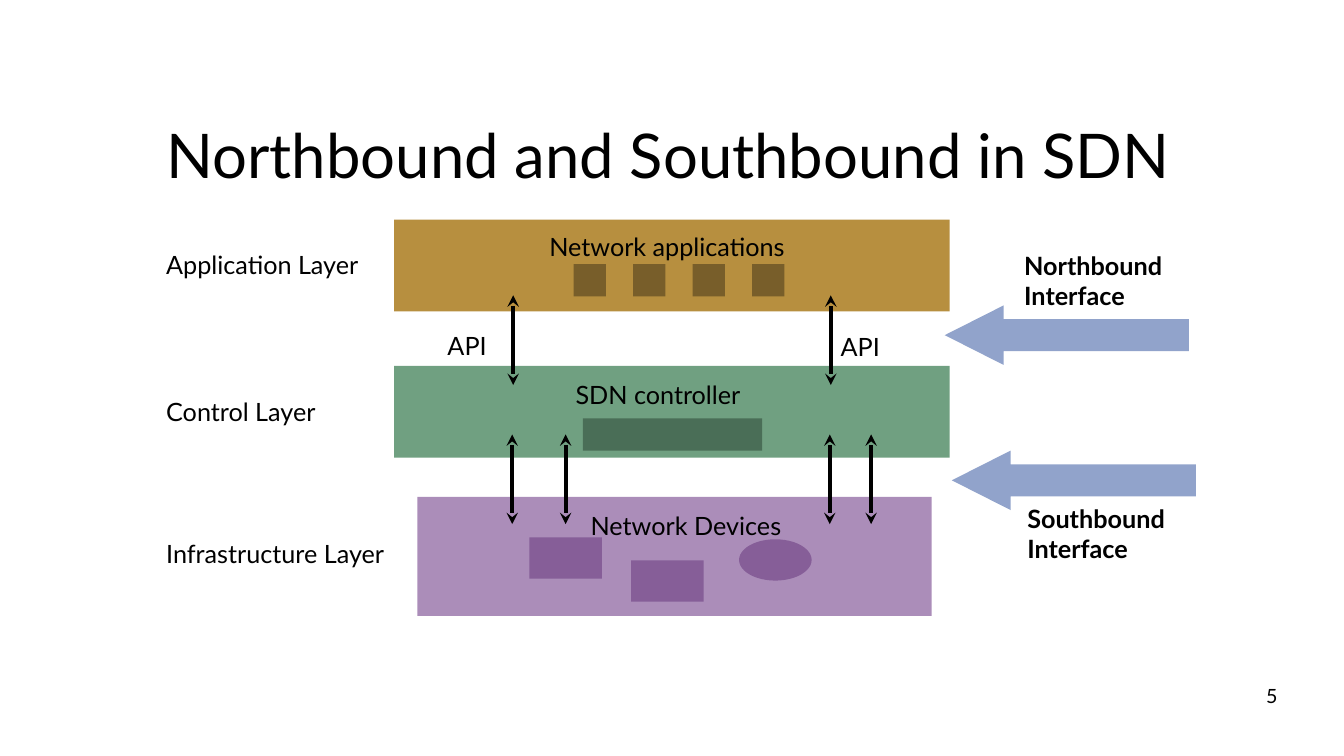
from lxml import etree
from pptx import Presentation
from pptx.dml.color import RGBColor
from pptx.enum.shapes import MSO_CONNECTOR as CONN, MSO_SHAPE as SHAPE
from pptx.enum.text import MSO_ANCHOR as ANCHOR, MSO_AUTO_SIZE as AUTO, PP_ALIGN as ALIGN
from pptx.oxml.ns import qn
from pptx.util import Inches, Pt

FONT = "Lato"
BLACK = RGBColor(0x00, 0x00, 0x00)
GOLD = RGBColor(0xB7, 0x8F, 0x3F)
DARK_GOLD = RGBColor(0x78, 0x5E, 0x2A)
GREEN = RGBColor(0x70, 0xA0, 0x81)
DARK_GREEN = RGBColor(0x4A, 0x6E, 0x57)
PURPLE = RGBColor(0xAB, 0x8D, 0xB9)
DARK_PURPLE = RGBColor(0x86, 0x5E, 0x98)
BLUE = RGBColor(0x91, 0xA3, 0xCB)

LABEL_X = 1.55
LAYER_X, LAYER_W, LAYER_H = 3.91, 5.51, 0.91
ARROW_H = 0.89


def box(*lengths):
    return [Inches(v) for v in lengths]


def write(tf, text, size, bold=False, **para_format):
    """Fill a text frame with one formatted paragraph."""
    p = tf.paragraphs[0]
    for name, value in para_format.items():
        setattr(p, name, value)
    r = p.add_run()
    r.text = text
    font = {"name": FONT, "size": Pt(size), "bold": bold}
    for name, value in font.items():
        setattr(r.font, name, value)
    r.font.color.rgb = BLACK


def add_title(s, text):
    title = s.shapes.title
    title.left, title.top, title.width, title.height = box(1.55, 1.19, 10.83, 0.98)
    tf = title.text_frame
    for name, value in {"vertical_anchor": ANCHOR.TOP, "auto_size": AUTO.NONE,
                        "word_wrap": True}.items():
        setattr(tf, name, value)
    write(tf, text, 44, alignment=ALIGN.LEFT, line_spacing=0.9)


def add_number(s, text):
    tf = s.shapes.add_textbox(*box(9.77, 6.7, 3, 0.4)).text_frame
    tf.word_wrap = True
    tf.vertical_anchor = ANCHOR.MIDDLE
    write(tf, text, 14, alignment=ALIGN.RIGHT)


def add_label(s, text, x, y, w, h=0.52, bold=False, spacing=1.5):
    tf = s.shapes.add_textbox(*box(x, y, w, h)).text_frame
    tf.word_wrap = True
    tf.auto_size = AUTO.SHAPE_TO_FIT_TEXT
    write(tf, text, 18, bold, alignment=ALIGN.JUSTIFY,
          line_spacing=spacing, space_after=Pt(8))


def add_block(s, color, x, y, w, h, kind=SHAPE.RECTANGLE):
    sp = s.shapes.add_shape(kind, *box(x, y, w, h))
    sp.shadow.inherit = False
    sp.fill.solid()
    sp.fill.fore_color.rgb = color
    sp.line.fill.background()
    return sp


def add_api_arrow(s, x, y):
    """Vertical double-headed arrow between two layers."""
    c = s.shapes.add_connector(CONN.STRAIGHT, *box(x, y, x, y + ARROW_H))
    c.line.color.rgb = BLACK
    c.line.width = Pt(2.75)
    ln = c.line._get_or_add_ln()
    for end in ("a:headEnd", "a:tailEnd"):
        etree.SubElement(ln, qn(end), type="stealth")
    etree.SubElement(c._element.spPr, qn("a:effectLst"))


def add_interface(s, text, arrow_x, arrow_y, text_x, text_y):
    """Block arrow pointing left, with its bold caption."""
    arrow = add_block(s, BLUE, arrow_x, arrow_y, 2.42, 0.59, SHAPE.LEFT_ARROW)
    arrow.adjustments[0] = 0.538
    arrow.adjustments[1] = 0.989
    add_label(s, text, text_x, text_y, 2.42, 0.71, bold=True, spacing=1.0)


def main():
    prs = Presentation()
    prs.slide_width, prs.slide_height = box(13.33, 7.5)
    s = prs.slides.add_slide(prs.slide_layouts[5])
    add_title(s, "Northbound and Southbound in SDN")
    add_number(s, "5")

    # Application layer
    add_block(s, GOLD, LAYER_X, 2.18, LAYER_W, LAYER_H)
    add_label(s, "Application Layer", LABEL_X, 2.27, 2.57)
    for i in range(4):
        add_block(s, DARK_GOLD, 5.69 + 0.59 * i, 2.62, 0.32, 0.32)
    add_label(s, "Network applications", 5.35, 2.1, 2.76)

    # Control layer
    add_block(s, GREEN, LAYER_X, 3.63, LAYER_W, LAYER_H)
    add_label(s, "Control Layer", LABEL_X, 3.73, 2.57)
    add_label(s, "SDN controller", 5.61, 3.56, 2.11)
    add_block(s, DARK_GREEN, 5.78, 4.15, 1.78, 0.32)

    # Northbound side
    for x in (5.09, 8.24):
        add_api_arrow(s, x, 2.93)
    for x, y in ((4.34, 3.08), (8.24, 3.09)):
        add_label(s, "API", x, y, 0.7)
    add_interface(s, "Northbound Interface", 9.37, 3.03, 10.06, 2.43)

    # Infrastructure layer
    add_block(s, PURPLE, 4.14, 4.93, 5.1, 1.18)
    add_label(s, "Infrastructure Layer", LABEL_X, 5.14, 2.79)
    add_label(s, "Network Devices", 5.76, 4.86, 2.21)
    for x, y, kind in ((5.25, 5.33, SHAPE.RECTANGLE),
                       (6.26, 5.56, SHAPE.RECTANGLE),
                       (7.33, 5.35, SHAPE.OVAL)):
        add_block(s, DARK_PURPLE, x, y, 0.72, 0.41, kind)

    # Southbound side
    for x in (5.08, 5.61, 8.23, 8.64):
        add_api_arrow(s, x, 4.31)
    add_interface(s, "Southbound Interface", 9.44, 4.47, 10.09, 4.94)

    prs.save("out.pptx")


if __name__ == "__main__":
    main()
